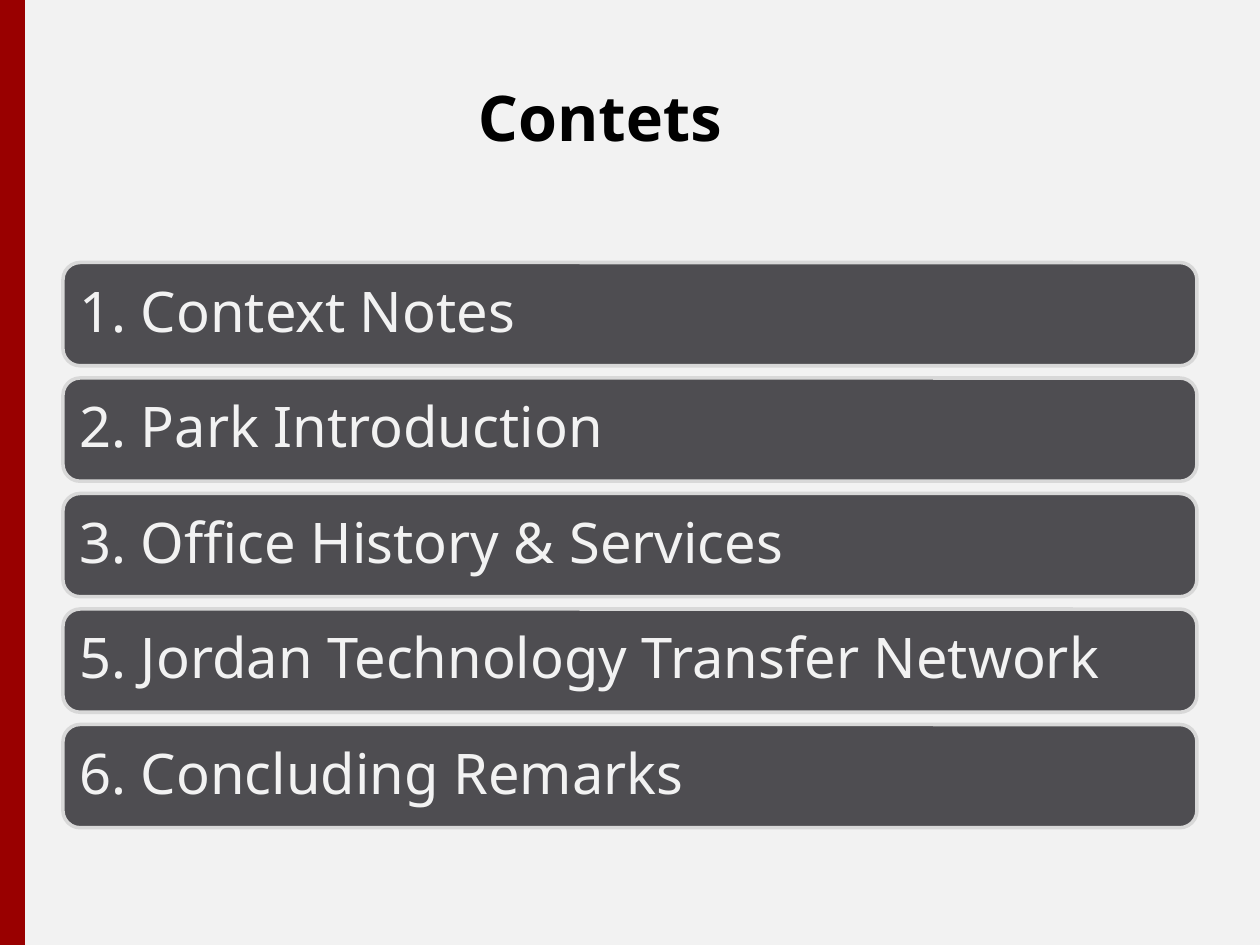
from pptx import Presentation
from pptx.dml.color import RGBColor
from pptx.enum.shapes import MSO_SHAPE
from pptx.enum.text import MSO_ANCHOR, PP_ALIGN
from pptx.util import Pt

TITLE = "Contets"
TOPICS = [
    "1. Context Notes",
    "2. Park Introduction",
    "3. Office History & Services",
    "5. Jordan Technology Transfer Network",
    "6. Concluding Remarks",
]
COLORS = {
    "background": "F2F2F2",
    "stripe": "990000",
    "title": "000000",
    "bar": "4E4D51",
    "border": "D8D8D8",
    "label": "F2F2F2",
}
FONT = "Noto Sans"
WIDTH, HEIGHT = 720, 540
LEFT, FIRST_TOP, BAR_WIDTH, BAR_HEIGHT, PITCH = 36, 150, 648, 59, 66


def color(name):
    return RGBColor.from_string(COLORS[name])


def add_filled(page, kind, left, top, width, height, fill):
    shape = page.shapes.add_shape(kind, Pt(left), Pt(top), Pt(width), Pt(height))
    shape.shadow.inherit = False
    shape.fill.solid()
    shape.fill.fore_color.rgb = color(fill)
    shape.line.fill.background()
    return shape


def write(box, text, size, name, align, bold=False):
    frame = box.text_frame
    frame.word_wrap = True
    frame.vertical_anchor = MSO_ANCHOR.MIDDLE
    para = frame.paragraphs[0]
    para.alignment = align
    span = para.add_run()
    span.text = text
    span.font.name = FONT
    span.font.size = Pt(size)
    span.font.bold = bold
    span.font.color.rgb = color(name)
    return frame


deck = Presentation()
deck.slide_width, deck.slide_height = Pt(WIDTH), Pt(HEIGHT)
page = deck.slides.add_slide(deck.slide_layouts[6])
page.background.fill.solid()
page.background.fill.fore_color.rgb = color("background")

# Side stripe and title
add_filled(page, MSO_SHAPE.RECTANGLE, 0, 0, 14.2, HEIGHT, "stripe")
title = page.shapes.add_textbox(Pt(LEFT), Pt(21.6), Pt(613.5), Pt(90))
write(title, TITLE, 36, "title", PP_ALIGN.CENTER, bold=True)

# One bar per topic
for index, topic in enumerate(TOPICS):
    bar = add_filled(page, MSO_SHAPE.ROUNDED_RECTANGLE, LEFT,
                     FIRST_TOP + index * PITCH, BAR_WIDTH, BAR_HEIGHT, "bar")
    bar.line.color.rgb = color("border")
    bar.line.width = Pt(2)
    frame = write(bar, topic, 32, "label", PP_ALIGN.LEFT)
    frame.margin_left = frame.margin_right = Pt(6.5)
    frame.paragraphs[0].line_spacing = 0.9

deck.save("out.pptx")
